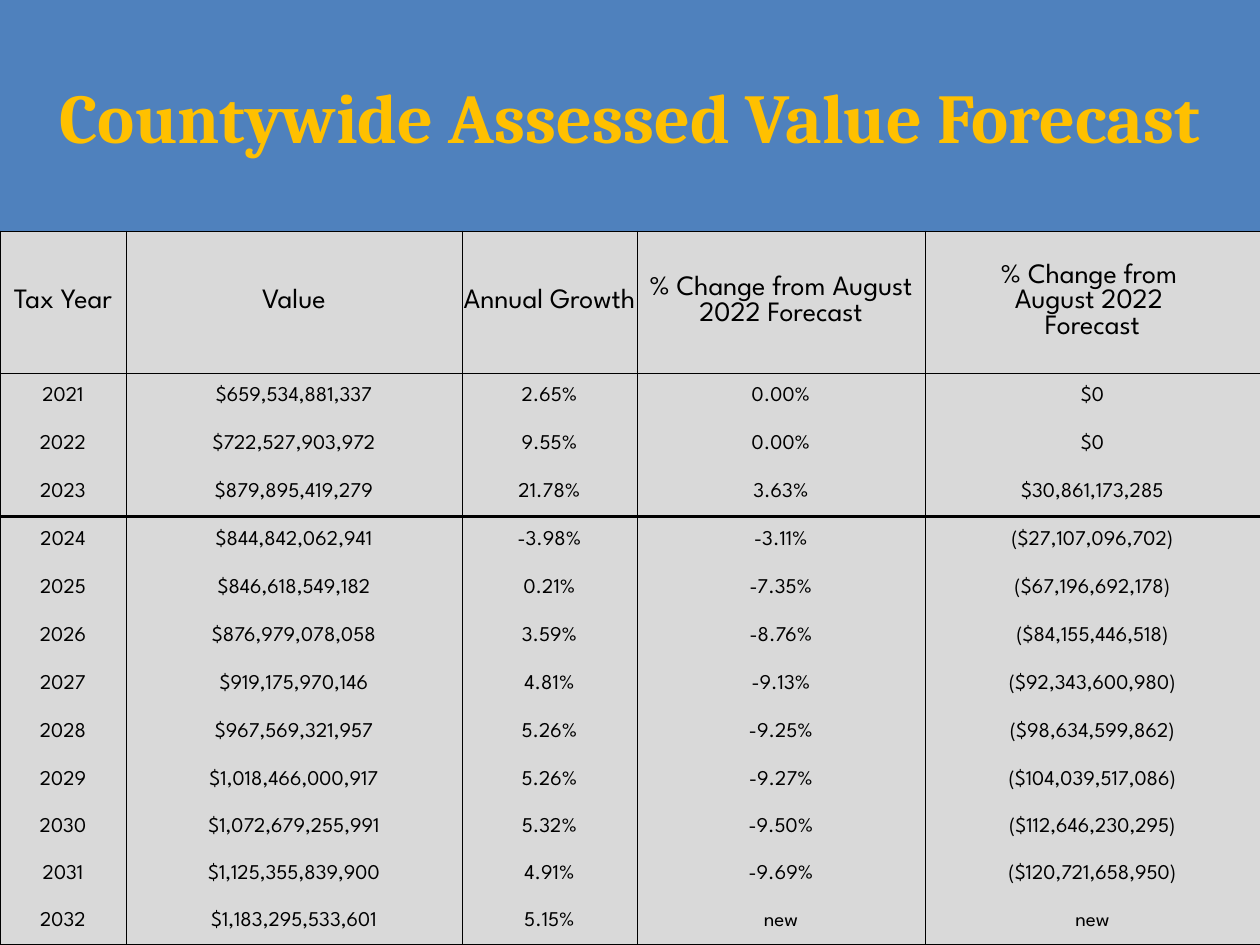
from dataclasses import dataclass

from lxml.etree import SubElement
from pptx import Presentation
from pptx.dml.color import RGBColor
from pptx.enum.text import MSO_ANCHOR, PP_ALIGN
from pptx.oxml.ns import qn
from pptx.util import Pt

PX = 7257.6


@dataclass(frozen=True)
class Theme:
    """Colours, fonts and sizes of the slide."""
    band: str = "4F81BD"
    title: str = "FFC000"
    cell: str = "D9D9D9"
    ink: str = "000000"
    title_font: str = "Cambria"
    table_font: str = "League Spartan"
    title_size: int = 40
    head_size: int = 16
    body_size: int = 12
    outline: float = 0.75
    thin: float = 0.5
    thick: float = 2


THEME = Theme()
COLS = [126, 336, 175, 288, 335]
ROWS = [142] + [48] * 8 + [47] * 4
LAST_ACTUAL_ROW = 3
HEADER = ["Tax Year", "Value", "Annual Growth", "% Change from August 2022 Forecast",
          "% Change from \vAugust 2022 \nForecast"]
FORECAST = [
    ["2021", "$659,534,881,337", "2.65%", "0.00%", "$0"],
    ["2022", "$722,527,903,972", "9.55%", "0.00%", "$0"],
    ["2023", "$879,895,419,279", "21.78%", "3.63%", "$30,861,173,285"],
    ["2024", "$844,842,062,941", "-3.98%", "-3.11%", "($27,107,096,702)"],
    ["2025", "$846,618,549,182", "0.21%", "-7.35%", "($67,196,692,178)"],
    ["2026", "$876,979,078,058", "3.59%", "-8.76%", "($84,155,446,518)"],
    ["2027", "$919,175,970,146", "4.81%", "-9.13%", "($92,343,600,980)"],
    ["2028", "$967,569,321,957", "5.26%", "-9.25%", "($98,634,599,862)"],
    ["2029", "$1,018,466,000,917", "5.26%", "-9.27%", "($104,039,517,086)"],
    ["2030", "$1,072,679,255,991", "5.32%", "-9.50%", "($112,646,230,295)"],
    ["2031", "$1,125,355,839,900", "4.91%", "-9.69%", "($120,721,658,950)"],
    ["2032", "$1,183,295,533,601", "5.15%", "new", "new"],
]


def px(n):
    """Turn pixels into EMU."""
    return round(n * PX)


def paint(fill, color):
    """Give a fill one solid colour."""
    fill.solid()
    fill.fore_color.rgb = RGBColor.from_string(color)


def style(p, font, size, color, bold=False):
    """Centre a paragraph and set its font."""
    p.alignment = PP_ALIGN.CENTER
    p.font.name = font
    p.font.size = Pt(size)
    p.font.bold = bold
    p.font.color.rgb = RGBColor.from_string(color)


def add_line(parent, tag, width):
    """Add a line element, invisible when the width is zero."""
    ln = SubElement(parent, qn(tag), w=str(Pt(width)))
    if width:
        fill = SubElement(ln, qn("a:solidFill"))
        SubElement(fill, qn("a:srgbClr"), val=THEME.ink)
    else:
        SubElement(ln, qn("a:noFill"))


def rule_width(edge):
    """Return the width of the horizontal rule above the given row."""
    if edge == LAST_ACTUAL_ROW + 1:
        return THEME.thick
    return THEME.thin if edge in (0, 1, len(ROWS)) else 0


def fill_cell(cell, text, row):
    """Write one table cell with its borders and fill."""
    cell.text = text
    cell.vertical_anchor = MSO_ANCHOR.MIDDLE
    cell.margin_left = cell.margin_right = cell.margin_top = cell.margin_bottom = 0
    size = THEME.body_size if row else THEME.head_size
    for p in cell.text_frame.paragraphs:
        style(p, THEME.table_font, size, THEME.ink)
    tc_pr = cell._tc.get_or_add_tcPr()
    widths = (THEME.thin, THEME.thin, rule_width(row), rule_width(row + 1))
    for side, width in zip("LRTB", widths):
        add_line(tc_pr, f"a:ln{side}", width)
    paint(cell.fill, THEME.cell)


def add_title(s, x, y, w, h):
    """Place the title band."""
    sp = s.shapes.title
    sp.left, sp.top, sp.width, sp.height = map(px, (x, y, w, h))
    paint(sp.fill, THEME.band)
    tf = sp.text_frame
    tf.text = "Countywide Assessed Value Forecast"
    tf.word_wrap = True
    tf.vertical_anchor = MSO_ANCHOR.MIDDLE
    p = tf.paragraphs[0]
    style(p, THEME.title_font, THEME.title_size, THEME.title, True)
    add_line(p.runs[0]._r.get_or_add_rPr(), "a:ln", THEME.outline)


def add_forecast(s, x, y, w, h):
    """Place the forecast table."""
    table = s.shapes.add_table(len(ROWS), len(COLS), *map(px, (x, y, w, h))).table
    table.first_row = table.horz_banding = False
    for col, width in zip(table.columns, COLS):
        col.width = px(width)
    for row, height in zip(table.rows, ROWS):
        row.height = px(height)
    for i, values in enumerate([HEADER] + FORECAST):
        for j, text in enumerate(values):
            fill_cell(table.cell(i, j), text, i)


def main():
    """Build and save the slide."""
    prs = Presentation()
    prs.slide_width, prs.slide_height = px(1260), px(945)
    s = prs.slides.add_slide(prs.slide_layouts[5])
    add_title(s, 0, 0, 1260, 231)
    add_forecast(s, 0, 231, sum(COLS), sum(ROWS))
    prs.save("out.pptx")


if __name__ == "__main__":
    main()
